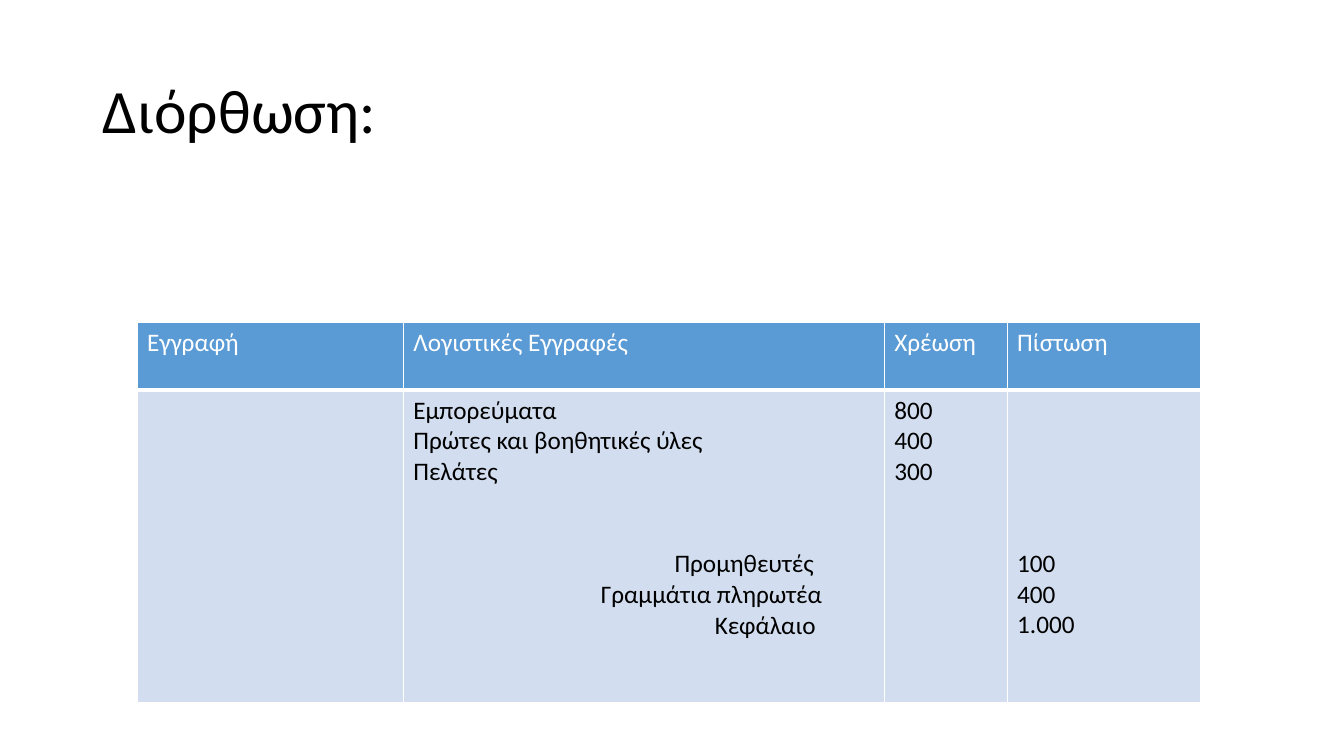
from lxml import etree
from pptx import Presentation
from pptx.dml.color import RGBColor
from pptx.enum.text import MSO_ANCHOR, PP_ALIGN
from pptx.oxml.ns import qn
from pptx.util import Pt

PX = 9144  # 100 px to the inch
LEFT = PP_ALIGN.LEFT
MIDDLE = MSO_ANCHOR.MIDDLE
BLACK = RGBColor(0x00, 0x00, 0x00)
WHITE = RGBColor(0xFF, 0xFF, 0xFF)
HEADER_BLUE = RGBColor(0x5B, 0x9B, 0xD5)
BODY_BLUE = RGBColor(0xD2, 0xDE, 0xEF)
FONT = "Calibri"


def style_cell(cell, fill, color, bottom_pt):
    properties = cell._tc.get_or_add_tcPr()
    for side, points in (("L", 1), ("R", 1), ("T", 1), ("B", bottom_pt)):
        border = etree.SubElement(properties, qn(f"a:ln{side}"), w=str(Pt(points)))
        border_fill = etree.SubElement(border, qn("a:solidFill"))
        etree.SubElement(border_fill, qn("a:srgbClr"), val=str(WHITE))
    cell.fill.solid()
    cell.fill.fore_color.rgb = fill
    for paragraph in cell.text_frame.paragraphs:
        paragraph.font.name = FONT
        paragraph.font.size = Pt(18)
        paragraph.font.bold = False
        paragraph.font.color.rgb = color


prs = Presentation()
prs.slide_width, prs.slide_height = 1333 * PX, 750 * PX
slide = prs.slides.add_slide(prs.slide_layouts[5])

title = slide.shapes.title
title.left, title.top, title.width, title.height = 92 * PX, 40 * PX, 1150 * PX, 145 * PX
title.text_frame.text = "Διόρθωση:"
title.text_frame.vertical_anchor = MIDDLE
heading = title.text_frame.paragraphs[0]
heading.alignment = LEFT
heading.line_spacing = 0.9
heading.font.name = FONT
heading.font.size = Pt(44)
heading.font.color.rgb = BLACK

HEADERS = ["Εγγραφή", "Λογιστικές Εγγραφές", "Χρέωση", "Πίστωση"]
COLUMN_WIDTHS = [264, 477, 122, 192]
ROW_HEIGHTS = [67, 310]
DEBITS = [("Eμπορεύματα", "800"), ("Πρώτες και βοηθητικές ύλες", "400"), ("Πελάτες", "300")]
# Account, amount, indent in px
CREDITS = [("Προμηθευτές", "100", 259), ("Γραμμάτια πληρωτέα", "400", 186), ("Κεφάλαιο", "1.000", 299)]

journal = slide.shapes.add_table(
    2, len(HEADERS), 136 * PX, 320 * PX, sum(COLUMN_WIDTHS) * PX, sum(ROW_HEIGHTS) * PX
).table
for column, width in zip(journal.columns, COLUMN_WIDTHS):
    column.width = width * PX
for row, height in zip(journal.rows, ROW_HEIGHTS):
    row.height = height * PX

entries = [
    "",
    "\n".join([line[0] for line in DEBITS + CREDITS]),
    "\n".join([amount for _, amount in DEBITS]),
    "\n".join([amount for _, amount, _ in CREDITS]),
]
for index, (header, entry) in enumerate(zip(HEADERS, entries)):
    header_cell, entry_cell = journal.cell(0, index), journal.cell(1, index)
    header_cell.text = header
    entry_cell.text = entry
    style_cell(header_cell, HEADER_BLUE, WHITE, 3)
    style_cell(entry_cell, BODY_BLUE, BLACK, 1)

# Credit accounts stand two lines below the debits, level with their amounts
credit_lines = journal.cell(1, 1).text_frame.paragraphs[len(DEBITS):]
credit_lines[0].space_before = Pt(44)
for paragraph, (_, _, indent) in zip(credit_lines, CREDITS):
    paragraph._p.get_or_add_pPr().set("marL", str(indent * PX))
journal.cell(1, 3).margin_top = 157 * PX

prs.save("out.pptx")
